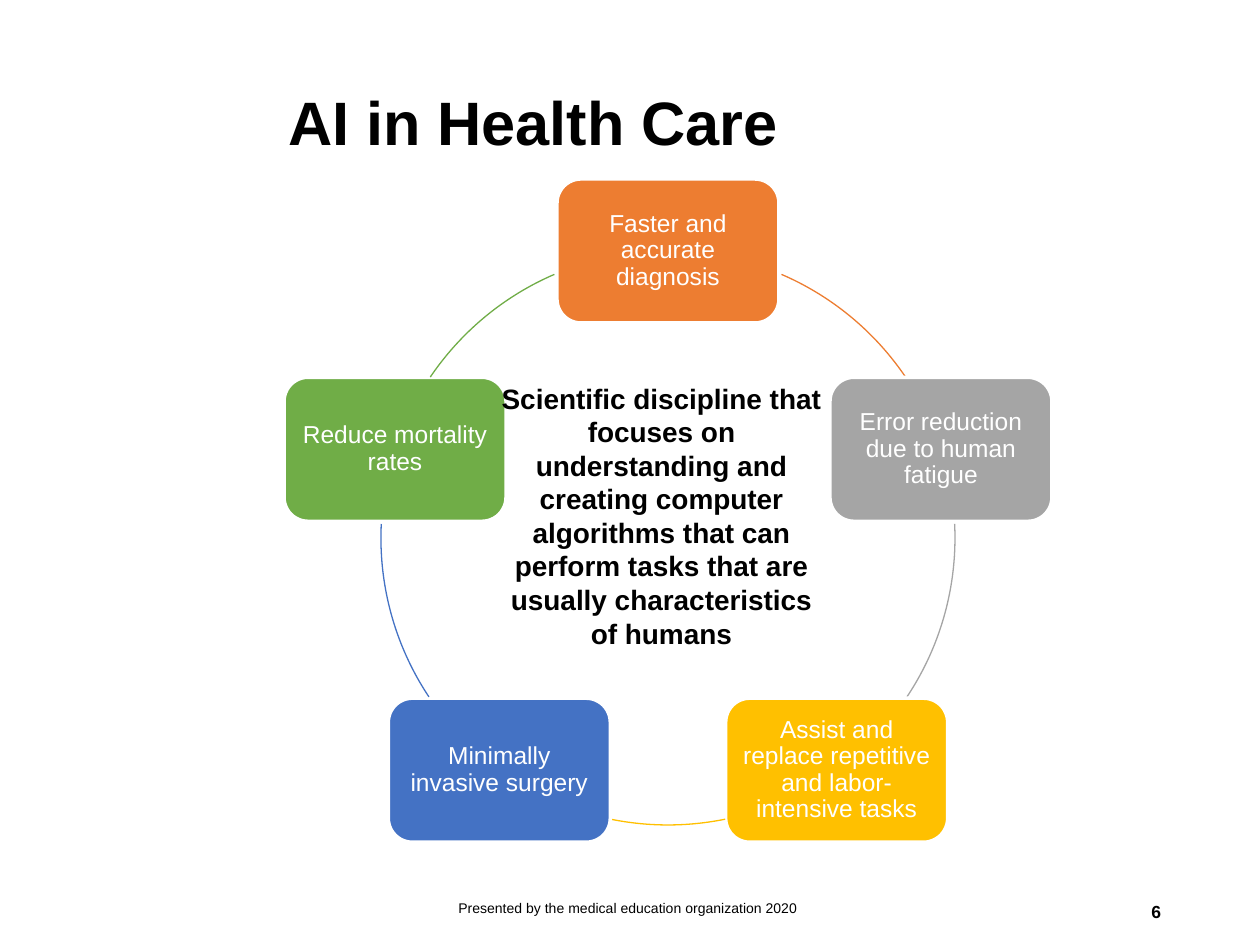
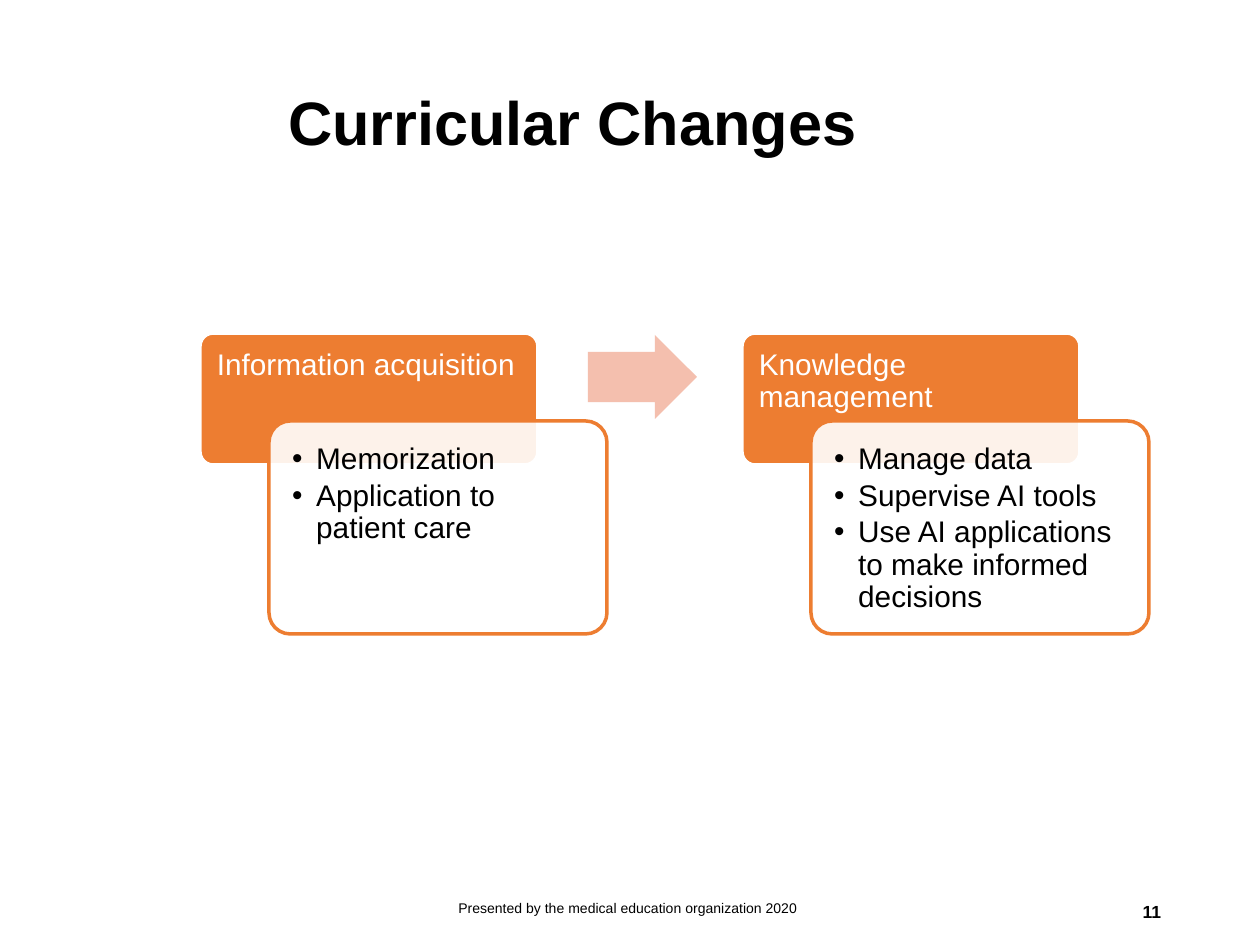
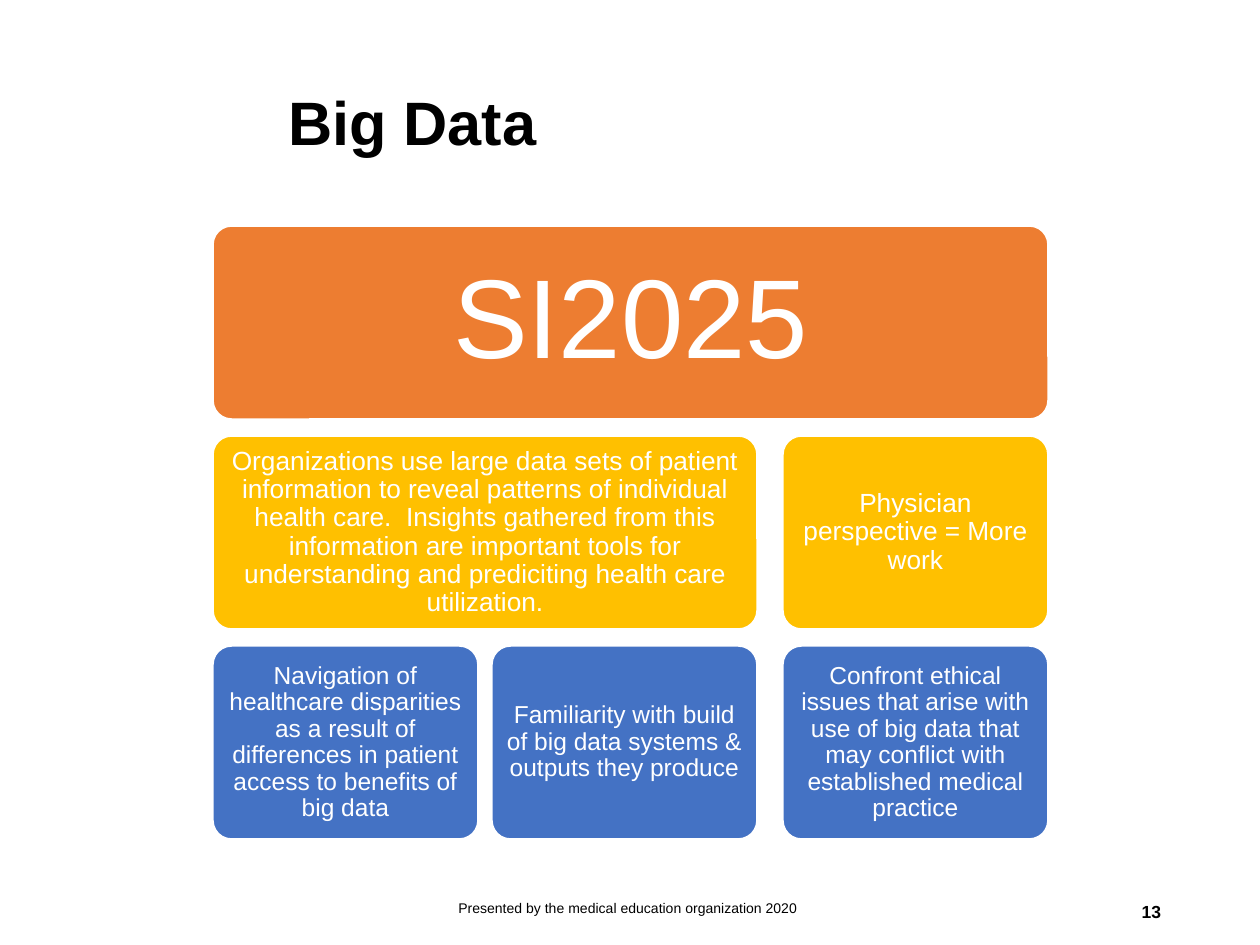
import math
from dataclasses import dataclass

import pptx
import pptx.dml.color
import pptx.enum.shapes
import pptx.enum.text
import pptx.util
from lxml import etree
from pptx.oxml.ns import qn

SHAPES = pptx.enum.shapes.MSO_SHAPE
ALIGN = pptx.enum.text.PP_ALIGN
ANCHOR = pptx.enum.text.MSO_ANCHOR
PX = 914400 / 126


@dataclass(frozen=True)
class Theme:
    font: str = "Arial"
    black: str = "000000"
    white: str = "FFFFFF"
    orange: str = "ED7D31"
    gray: str = "A5A5A5"
    gold: str = "FFC000"
    blue: str = "4472C4"
    green: str = "70AD47"
    peach: str = "F4BFAE"
    title_size: int = 35
    headline_size: int = 64
    step_size: int = 17
    statement_size: int = 16
    body_size: int = 15
    node_size: int = 14
    number_size: int = 10
    footer_size: int = 8
    outline: float = 2
    arc_line: float = 0.75


THEME = Theme()
FOOTER = "Presented by the medical education organization 2020"


def px(length):
    return pptx.util.Emu(round(length * PX))


def rgb(color):
    return pptx.dml.color.RGBColor.from_string(color)


def write(shape, lines, size, color=THEME.black, bold=False, align=ALIGN.LEFT,
          anchor=ANCHOR.MIDDLE, insets=(13, 6, 13, 6), spacing=None, bullets=False):
    """Fill a shape with one paragraph per line; insets are left, top, right, bottom."""
    frame = shape.text_frame
    frame.word_wrap = True
    frame.vertical_anchor = anchor
    (frame.margin_left, frame.margin_top,
     frame.margin_right, frame.margin_bottom) = map(px, insets)
    frame.text = "\n".join(lines)
    for paragraph in frame.paragraphs:
        paragraph.alignment = align
        if spacing:
            paragraph.line_spacing = spacing
        if bullets:
            add_bullet(paragraph)
        font = paragraph.runs[0].font
        font.name, font.size, font.bold = THEME.font, pptx.util.Pt(size), bold
        font.color.rgb = rgb(color)


def add_bullet(paragraph, indent=24):
    paragraph.level = 1
    paragraph.space_after = pptx.util.Pt(2.5)
    properties = paragraph._p.get_or_add_pPr()
    properties.set("marL", str(px(indent)))
    properties.set("indent", str(px(-indent)))
    etree.SubElement(properties, qn("a:buFont"), typeface=THEME.font)
    etree.SubElement(properties, qn("a:buChar"), char="•")


def add_text(slide, box, lines, size, **style):
    write(slide.shapes.add_textbox(*map(px, box)), lines, size, **style)


def add_figure(slide, kind, box, fill=None, line=None, width=THEME.outline, adjustments=()):
    shape = slide.shapes.add_shape(kind, *map(px, box))
    shape.shadow.inherit = False
    for index, value in enumerate(adjustments):
        shape.adjustments[index] = value
    if fill:
        shape.fill.solid()
        shape.fill.fore_color.rgb = rgb(fill)
    else:
        shape.fill.background()
    if line:
        shape.line.color.rgb = rgb(line)
        shape.line.width = pptx.util.Pt(width)
    else:
        shape.line.fill.background()
    return shape


def add_card(slide, box, text, fill, size, adjustments=(), inset=8):
    card = add_figure(slide, SHAPES.ROUNDED_RECTANGLE, box, fill, THEME.white,
                      adjustments=adjustments)
    write(card, [text], size, THEME.white, align=ALIGN.CENTER,
          insets=(inset,) * 4, spacing=0.9)


def add_slide(presentation, title, number):
    """Add a blank slide with the shared title, footer and page number."""
    slide = presentation.slides.add_slide(presentation.slide_layouts[6])
    add_text(slide, (275, 34, 900, 183), [title], THEME.title_size,
             bold=True, insets=(13,) * 4, spacing=0.9)
    add_text(slide, (415, 883, 426, 50), [FOOTER], THEME.footer_size, align=ALIGN.CENTER)
    add_text(slide, (890, 887, 284, 50), [str(number)], THEME.number_size,
             bold=True, align=ALIGN.RIGHT)
    return slide


def add_cycle(slide, box, nodes, arcs):
    """Place nodes evenly on the circle inside box, from the top clockwise, joined by arcs."""
    left, top, diameter, _ = box
    radius = diameter / 2
    node_width, node_height = 222, 144
    for index, ((text, color), angles) in enumerate(zip(nodes, arcs)):
        angle = math.radians(360 * index / len(nodes) - 90)
        center_x = left + radius * (1 + math.cos(angle))
        center_y = top + radius * (1 + math.sin(angle))
        add_card(slide, (center_x - node_width / 2, center_y - node_height / 2,
                         node_width, node_height), text, color, THEME.node_size)
        # Adjustments count 100000ths, angles 60000ths of a degree.
        add_figure(slide, SHAPES.ARC, box, line=color, width=THEME.arc_line,
                   adjustments=[degrees * 0.6 for degrees in angles])


def add_step(slide, left, top, heading, points):
    """Draw a heading card with a translucent list card overlapping its lower right."""
    width = 338
    header = add_figure(slide, SHAPES.ROUNDED_RECTANGLE, (left, top, width, 132),
                        THEME.orange, THEME.white, adjustments=[0.1])
    write(header, [heading], THEME.step_size, THEME.white, anchor=ANCHOR.TOP,
          insets=(13, 13, 13, 9), spacing=0.9)
    panel = add_figure(slide, SHAPES.ROUNDED_RECTANGLE, (left + 69, top + 88, width, 213),
                       THEME.white, THEME.orange, adjustments=[0.1])
    fill_color = panel._element.spPr.find(qn("a:solidFill"))[0]
    etree.SubElement(fill_color, qn("a:alpha"), val="90000")
    write(panel, points, THEME.step_size, anchor=ANCHOR.TOP, insets=(17,) * 4,
          spacing=0.9, bullets=True)


def add_hierarchy(slide, left, top, rows):
    """Stack rows of cards; each card names its first column and how many it spans."""
    column_width, row_height, row_pitch = 267, 195, 210
    column_lefts = (0, 279, 570)
    for row, (color, size, inset, cards) in enumerate(rows):
        for first, span, text in cards:
            start = column_lefts[first]
            width = column_lefts[first + span - 1] + column_width - start
            add_card(slide, (left + start, top + row * row_pitch, width, row_height),
                     text, color, size, [0.1], inset)


def build_health_care(presentation):
    slide = add_slide(presentation, "AI in Health Care", 6)
    nodes = [
        ("Faster and accurate diagnosis", THEME.orange),
        ("Error reduction due to human fatigue", THEME.gray),
        ("Assist and replace repetitive and labor-intensive tasks", THEME.gold),
        ("Minimally invasive surgery", THEME.blue),
        ("Reduce mortality rates", THEME.green),
    ]
    arcs = [(293.3, 325.9), (357.2, 33.6), (78.5, 101.5), (146.4, 182.8), (214.1, 246.7)]
    add_cycle(slide, (381, 251, 574, 574), nodes, arcs)
    statement = ("Scientific discipline that focuses on understanding and creating computer "
                 "algorithms that can perform tasks that are usually characteristics of humans")
    add_text(slide, (488, 375, 347, 285), [statement], THEME.statement_size, bold=True,
             align=ALIGN.CENTER, anchor=ANCHOR.TOP)


def build_curricular_changes(presentation):
    slide = add_slide(presentation, "Curricular Changes", 11)
    top = 333
    add_step(slide, 200, top, "Information acquisition",
             ["Memorization", "Application to patient care"])
    add_figure(slide, SHAPES.RIGHT_ARROW, (588, top + 2, 109, 84), THEME.peach,
               adjustments=[0.6, 0.5])
    add_step(slide, 742, top, "Knowledge management",
             ["Manage data", "Supervise AI tools",
              "Use AI applications to make informed decisions"])


def build_big_data(presentation):
    slide = add_slide(presentation, "Big Data", 13)
    add_hierarchy(slide, 212, 225, [
        (THEME.orange, THEME.headline_size, 34, [(0, 3, "SI2025")]),
        (THEME.gold, THEME.body_size, 8, [
            (0, 2, "Organizations use large data sets of patient information to reveal "
                   "patterns of individual health care.  Insights gathered from this "
                   "information are important tools for understanding and prediciting "
                   "health care utilization."),
            (2, 1, "Physician perspective = More work"),
        ]),
        (THEME.blue, THEME.node_size, 8, [
            (0, 1, "Navigation of healthcare disparities as a result of differences in "
                   "patient access to benefits of big data"),
            (1, 1, "Familiarity with build of big data systems & outputs they produce"),
            (2, 1, "Confront ethical issues that arise with use of big data that may "
                   "conflict with established medical practice"),
        ]),
    ])


def main():
    presentation = pptx.Presentation()
    presentation.slide_width, presentation.slide_height = px(1260), px(945)
    build_health_care(presentation)
    build_curricular_changes(presentation)
    build_big_data(presentation)
    presentation.save("out.pptx")


if __name__ == "__main__":
    main()
